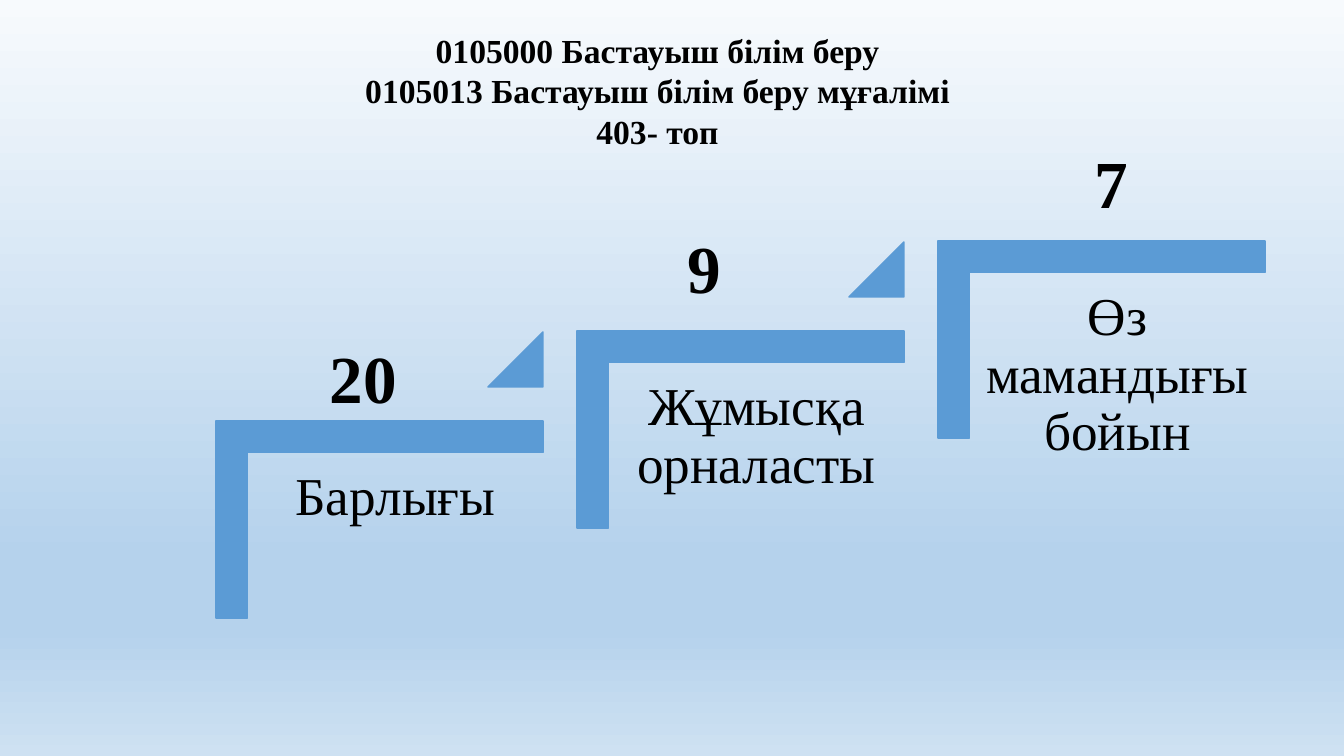
from copy import deepcopy
from pptx import Presentation
from pptx.dml.color import RGBColor
from pptx.enum.shapes import MSO_SHAPE
from pptx.enum.text import MSO_AUTO_SIZE, PP_ALIGN
from pptx.oxml.ns import qn
from pptx.util import Pt

BLUE = "5B9BD5"


def px(*lengths):
    return [round(n * 914400 / 100.8) for n in lengths]


def rgb(color):
    return RGBColor.from_string(color)


prs = Presentation()
prs.slide_width, prs.slide_height = px(1344, 756)
s = prs.slides.add_slide(prs.slide_layouts[6])

# Background gradient, top to bottom
fill = s.background.fill
fill.gradient()
fill.gradient_angle = 270
stops = s.background._cSld.find(".//" + qn("a:gsLst"))
for _ in range(2):
    stops.append(deepcopy(stops[0]))
gradient = [(0, "F7FAFD"), (74, "B5D2EC"), (83, "B5D2EC"), (100, "CEE1F2")]
for stop, (percent, color) in zip(fill.gradient_stops, gradient):
    stop.position = percent / 100
    stop.color.rgb = rgb(color)

# Stairs: each step is one offset right and up
STEP_X, STEP_Y = 361, -90
labels = ["Барлығы", "Жұмысқа орналасты", "Өз мамандығы бойын"]
texts = []
for i, label in enumerate(labels):
    dx, dy = i * STEP_X, i * STEP_Y
    shapes = [(MSO_SHAPE.CORNER, (281, 356, 197, 327), (0.161, 0.161), 90)]
    if i < len(labels) - 1:
        shapes.append((MSO_SHAPE.ISOSCELES_TRIANGLE, (488, 332, 55, 55), (1,), 0))
    for kind, (x, y, w, h), adjustments, rotation in shapes:
        sp = s.shapes.add_shape(kind, *px(x + dx, y + dy, w, h))
        for n, value in enumerate(adjustments):
            sp.adjustments[n] = value
        sp.rotation = rotation
        sp.shadow.inherit = False
        sp.fill.solid()
        sp.fill.fore_color.rgb = rgb(BLUE)
        sp.line.color.rgb = rgb(BLUE)
        sp.line.width = Pt(1)
    texts.append(([label], (248 + dx, 454 + dy, 295, 259), 38, False, True))

# Title and numbers
title = ["0105000 Бастауыш білім беру", "0105013 Бастауыш білім беру мұғалімі", "403- топ"]
texts += [
    (title, (352, 25, 611, 132), 24, True, False),
    (["20"], (320, 331, 89, 92), 48, True, False),
    (["9"], (678, 221, 54, 92), 48, True, False),
    (["7"], (1085, 136, 54, 92), 48, True, False),
]

# All text: step labels wrap, the rest fits its lines
for lines, box, size, bold, wrap in texts:
    tf = s.shapes.add_textbox(*px(*box)).text_frame
    tf.word_wrap = wrap
    if wrap:
        tf.margin_left, tf.margin_top, tf.margin_right, tf.margin_bottom = px(16, 16, 16, 16)
    else:
        tf.auto_size = MSO_AUTO_SIZE.SHAPE_TO_FIT_TEXT
    tf.text = "\n".join(lines)
    for p in tf.paragraphs:
        p.alignment = PP_ALIGN.LEFT if size == 48 else PP_ALIGN.CENTER
        if wrap:
            p.line_spacing = 0.9
        p.font.name = "Times New Roman"
        p.font.size = Pt(size)
        p.font.bold = bold
        p.font.color.rgb = rgb("000000")

prs.save("out.pptx")
